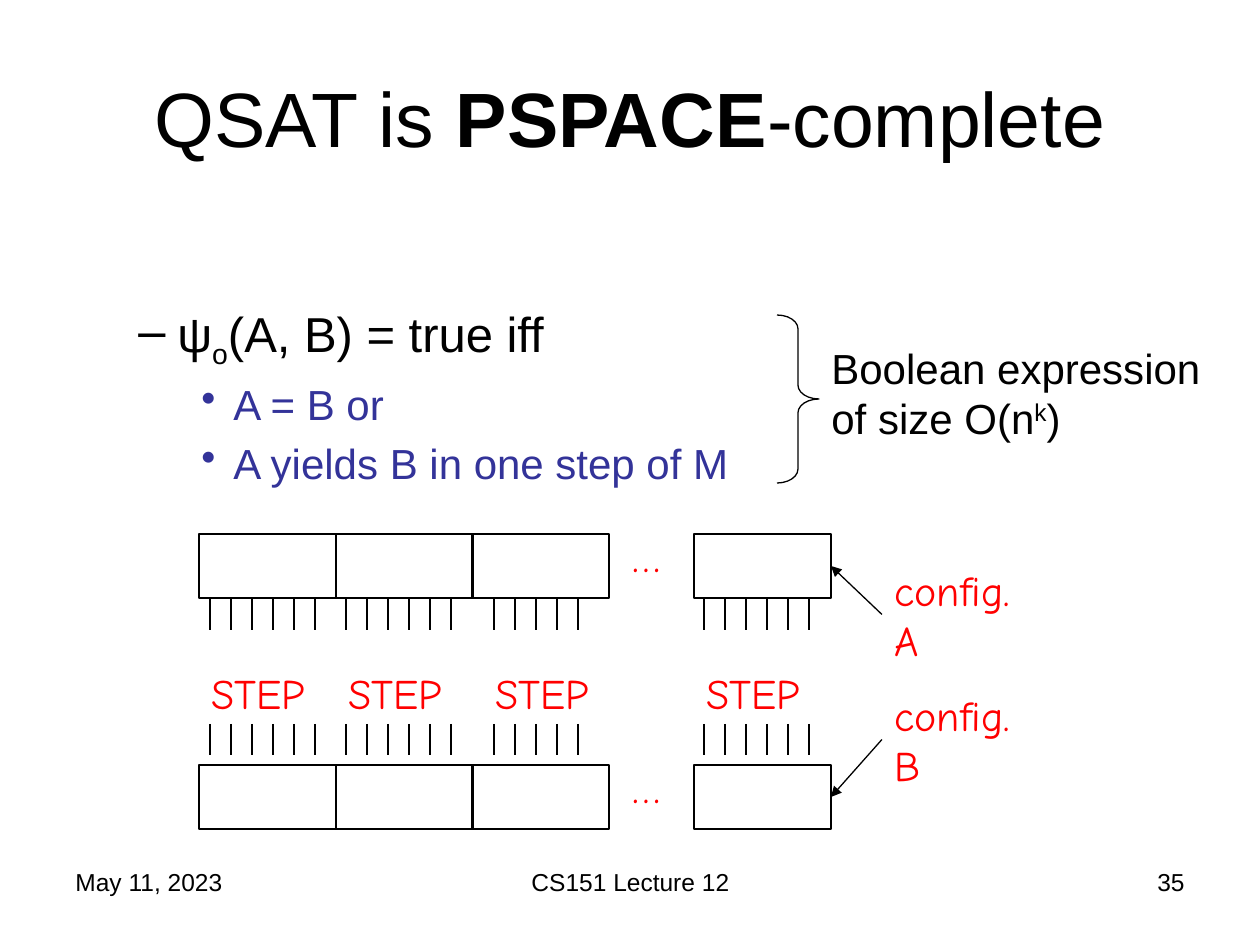
from lxml.etree import SubElement
from pptx import Presentation
from pptx.dml.color import RGBColor
from pptx.enum.shapes import MSO_CONNECTOR, MSO_SHAPE
from pptx.enum.text import MSO_ANCHOR, PP_ALIGN
from pptx.oxml.ns import qn
from pptx.util import Pt

PX = 914400 // 126
COLORS = {"ink": "000000", "detail": "333399", "accent": "FF0000"}
HAND = "Comic Neue"

deck = Presentation()
deck.slide_width, deck.slide_height = 1260 * PX, 945 * PX
page = deck.slides.add_slide(deck.slide_layouts[6])


def add_text(text, left, top, width, height, size=24, font="Arial", color="ink",
             align=PP_ALIGN.LEFT, anchor=MSO_ANCHOR.TOP, wrap=True, para=None):
    """Text is a string or a list of (string, format) spans; para reuses a paragraph."""
    box = None
    if para is None:
        box = page.shapes.add_textbox(left * PX, top * PX, width * PX, height * PX)
        box.text_frame.word_wrap = wrap
        box.text_frame.vertical_anchor = anchor
        para = box.text_frame.paragraphs[0]
    para.alignment = align
    for words, style in [(text, {})] if isinstance(text, str) else text:
        span = para.add_run()
        span.text = words
        span.font.name = font
        span.font.size = Pt(size)
        span.font.bold = style.get("bold", False)
        span.font.color.rgb = RGBColor.from_string(COLORS[color])
        if "baseline" in style:
            span._r.get_or_add_rPr().set("baseline", str(style["baseline"] * 1000))
    return box


def add_line(x1, y1, x2, y2, arrow=False):
    line = page.shapes.add_connector(
        MSO_CONNECTOR.STRAIGHT, x1 * PX, y1 * PX, x2 * PX, y2 * PX)
    line.line.color.rgb = RGBColor.from_string(COLORS["ink"])
    line.line.width = Pt(0.75)
    properties = line._element.spPr
    if arrow:
        SubElement(properties.find(qn("a:ln")), qn("a:tailEnd"), type="triangle")
    SubElement(properties, qn("a:effectLst"))
    return line


# Title and footer
add_text([("QSAT is ", {}), ("PSPACE", {"bold": True}), ("-complete", {})],
         63, 38, 1134, 157, size=44, align=PP_ALIGN.CENTER, anchor=MSO_ANCHOR.MIDDLE)
add_text("May 11, 2023", 63, 861, 294, 66, size=14)
add_text("CS151 Lecture 12", 431, 861, 399, 66, size=14, align=PP_ALIGN.CENTER)
add_text("35", 903, 861, 294, 66, size=14, align=PP_ALIGN.RIGHT)

# Definition with its two cases: text, bullet, level, margin, hanging, size, color
definition = [
    ([("ψ", {}), ("o", {"baseline": -25}), ("(A, B) = true iff", {})],
     "–", 1, 102, 39, 28, "ink"),
    ("A = B or", "•", 2, 158, 32, 24, "detail"),
    ("A yields B in one step of M", "•", 2, 158, 32, 24, "detail"),
]
body = page.shapes.add_textbox(63 * PX, 297 * PX, 1134 * PX, 210 * PX)
body.text_frame.word_wrap = True
for index, (text, bullet, level, margin, hanging, size, color) in enumerate(definition):
    para = body.text_frame.add_paragraph() if index else body.text_frame.paragraphs[0]
    para.level = level
    para.space_before = Pt(size * 0.2 if index else 0)
    format_node = para._p.get_or_add_pPr()
    format_node.set("marL", str(margin * PX))
    format_node.set("indent", str(-hanging * PX))
    SubElement(format_node, qn("a:buChar"), char=bullet)
    add_text(text, 0, 0, 0, 0, size=size, color=color, para=para)

# Two configurations: tape cells, ticks facing the steps, and a labelled arrow
cell_lefts = [199, 336, 472, 694]
tick_groups = [(210, 6), (346, 6), (494, 5), (704, 6)]
configurations = [("config. A", 534, 599, 558), ("config. B", 765, 724, 683)]
for name, cell_top, tick_top, label_top in configurations:
    for left in cell_lefts:
        cell = page.shapes.add_shape(
            MSO_SHAPE.RECTANGLE, left * PX, cell_top * PX, 137 * PX, 64 * PX)
        cell.shadow.inherit = False
        cell.fill.background()
        cell.line.color.rgb = RGBColor.from_string(COLORS["ink"])
        cell.line.width = Pt(0.75)
    add_text("…", 620, cell_top - 10, 54, 63, font=HAND, color="accent", wrap=False)
    for start, count in tick_groups:
        for tick in range(count):
            x = start + 21 * tick
            add_line(x, tick_top, x, tick_top + 31)
    label = add_text(name, 882, label_top, 168, 113, font=HAND, color="accent")
    arrow = add_line(882, label_top + 56, 831, cell_top + 32, arrow=True)
    arrow.begin_connect(label, 1)
    arrow.end_connect(cell, 3)

# Step between the configurations
for left in [199, 336, 483, 694]:
    add_text("STEP", left, 661, 168, 63, font=HAND, color="accent")

# Brace with the size of the expression
brace = page.shapes.add_shape(
    MSO_SHAPE.RIGHT_BRACE, 777 * PX, 315 * PX, 42 * PX, 168 * PX)
brace.adjustments[0] = 0.33
brace.shadow.inherit = False
brace.fill.background()
brace.line.color.rgb = RGBColor.from_string(COLORS["ink"])
brace.line.width = Pt(0.75)
add_text([("Boolean expression of size O(n", {}), ("k", {"baseline": 30}), (")", {})],
         819, 336, 410, 113)

deck.save("out.pptx")
